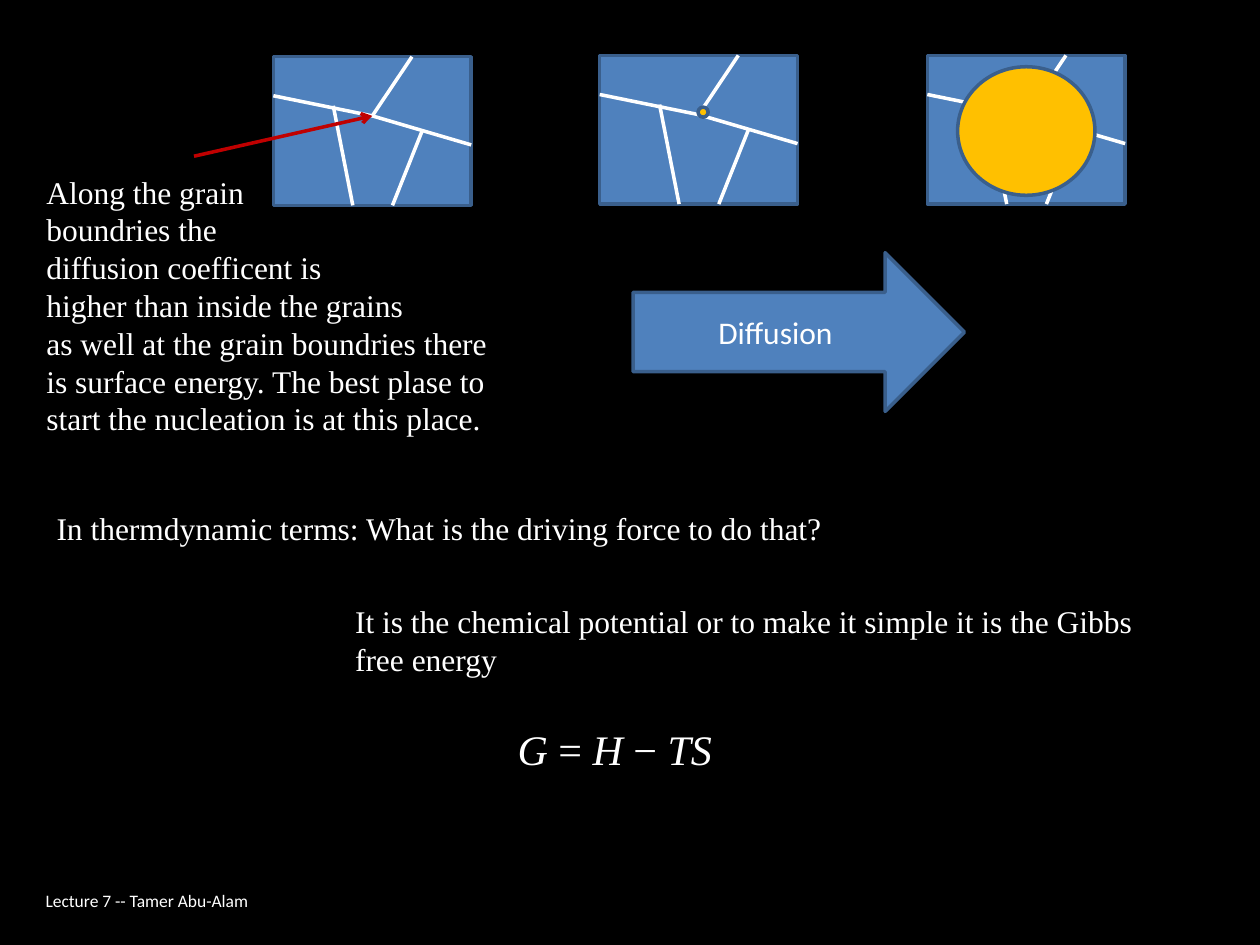
from lxml import etree
from pptx import Presentation
from pptx.dml.color import RGBColor
from pptx.enum.shapes import MSO_CONNECTOR, MSO_SHAPE
from pptx.enum.text import MSO_ANCHOR, MSO_AUTO_SIZE, PP_ALIGN
from pptx.oxml.ns import qn
from pptx.util import Inches, Pt

STRAIGHT = MSO_CONNECTOR.STRAIGHT
RECTANGLE = MSO_SHAPE.RECTANGLE
OVAL = MSO_SHAPE.OVAL
DOWN_ARROW = MSO_SHAPE.DOWN_ARROW
MIDDLE = MSO_ANCHOR.MIDDLE
TOP = MSO_ANCHOR.TOP
FIT = MSO_AUTO_SIZE.SHAPE_TO_FIT_TEXT
FIXED = MSO_AUTO_SIZE.NONE
LEFT = PP_ALIGN.LEFT
CENTER = PP_ALIGN.CENTER

COLUMNS, ROWS = 100, 75
TILE_SIZE = (15.7, 11.8)
TILE_ORIGINS = [(21.7, 4.5), (47.6, 4.4), (73.6, 4.4)]
JUNCTION = (7.85, 4.7)
BOUNDARIES = [
    (JUNCTION, (11, 0)),
    (JUNCTION, (15.7, 7)),
    ((11.8, 5.9), (9.45, 11.8)),
    (JUNCTION, (0, 3.1)),
    ((4.75, 3.9), (6.3, 11.8)),
]


def color(value):
    return RGBColor.from_string(value)


def write(shape, lines, font="Times New Roman", size=18, align=LEFT,
          anchor=TOP, wrap=False, fit=FIT):
    frame = shape.text_frame
    frame.word_wrap = wrap
    frame.auto_size = fit
    frame.vertical_anchor = anchor
    for index, line in enumerate(lines):
        para = frame.add_paragraph() if index else frame.paragraphs[0]
        para.alignment = align
        for text, italic in [(line, False)] if isinstance(line, str) else line:
            span = para.add_run()
            span.text = text
            span.font.name = font
            span.font.size = Pt(size)
            span.font.italic = italic
            span.font.color.rgb = color(SlideBuilder.white)


class SlideBuilder:
    white = "FFFFFF"
    blue = "4F81BD"
    outline = "3A5F8C"
    gold = "FFC000"
    red = "C00000"
    line_width = Pt(2)

    def __init__(self, deck):
        self.column = deck.slide_width / COLUMNS
        self.row = deck.slide_height / ROWS
        self.page = deck.slides.add_slide(deck.slide_layouts[6])
        background = self.page.background.fill
        background.solid()
        background.fore_color.rgb = color("000000")

    def place(self, *lengths):
        units = (self.column, self.row) * 2
        return [round(length * unit) for length, unit in zip(lengths, units)]

    def text(self, left, top, width, height, lines, **style):
        box = self.page.shapes.add_textbox(*self.place(left, top, width, height))
        write(box, lines, **style)

    def shape(self, kind, left, top, width, height, fill):
        shape = self.page.shapes.add_shape(kind, *self.place(left, top, width, height))
        shape.shadow.inherit = False
        shape.fill.solid()
        shape.fill.fore_color.rgb = color(fill)
        shape.line.color.rgb = color(self.outline)
        shape.line.width = self.line_width
        return shape

    def line(self, start, end, stroke, arrow=False):
        line = self.page.shapes.add_connector(STRAIGHT, *self.place(*start, *end))
        line.line.color.rgb = color(stroke)
        line.line.width = self.line_width
        properties = line._element.spPr
        if arrow:
            etree.SubElement(properties.find(qn("a:ln")), qn("a:tailEnd"), type="arrow")
        etree.SubElement(properties, qn("a:effectLst"))

    def grain_tile(self, left, top):
        self.shape(RECTANGLE, left, top, *TILE_SIZE, self.blue)
        for boundary in BOUNDARIES:
            start, end = [(left + x, top + y) for x, y in boundary]
            self.line(start, end, self.white)

    def diffusion_arrow(self, left, top, width, height, label):
        arrow = self.shape(DOWN_ARROW, left, top, width, height, self.blue)
        arrow.rotation = 270
        write(arrow, [label], font="Calibri", align=CENTER, anchor=MIDDLE,
              wrap=True, fit=FIXED)
        arrow.text_frame._txBody.bodyPr.set("vert", "vert")


def main():
    deck = Presentation()
    deck.slide_width, deck.slide_height = Inches(10), Inches(7.5)
    slide = SlideBuilder(deck)

    slide.text(-4.2, 69.5, 31.7, 4, ["Lecture 7 -- Tamer Abu-Alam"], font="Calibri",
               size=10, align=CENTER, anchor=MIDDLE, wrap=True, fit=FIXED)

    first, second, third = TILE_ORIGINS
    slide.grain_tile(*first)
    slide.line((15.4, 12.4), (first[0] + JUNCTION[0], first[1] + JUNCTION[1]),
               slide.red, arrow=True)
    slide.text(2.7, 13.2, 37.4, 22.2, [
        "Along the grain",
        "boundries the",
        "diffusion coefficent is",
        "higher than inside the grains",
        "as well at the grain boundries there",
        "is surface energy. The best plase to",
        "start the nucleation is at this place.",
    ])
    slide.grain_tile(*second)
    slide.shape(OVAL, 55.4, 8.5, 0.8, 0.8, slide.gold)
    slide.grain_tile(*third)
    slide.shape(OVAL, 76, 5.3, 10.9, 10.2, slide.gold)

    slide.text(3.5, 39.9, 64.5, 4,
               ["In thermdynamic terms: What is the driving force to do that?"])
    slide.diffusion_arrow(57.1, 13.2, 12.6, 26.3, "Diffusion ")
    slide.text(27.2, 47.3, 64.4, 7.1, [
        "It is the chemical potential or to make it simple it is the Gibbs",
        "free energy",
    ])
    slide.text(40.1, 56.9, 18.4, 5, [
        [("G ", True), ("= ", False), ("H", True), (" − ", False), ("TS", True)],
    ], size=24)

    deck.save("out.pptx")


if __name__ == "__main__":
    main()
